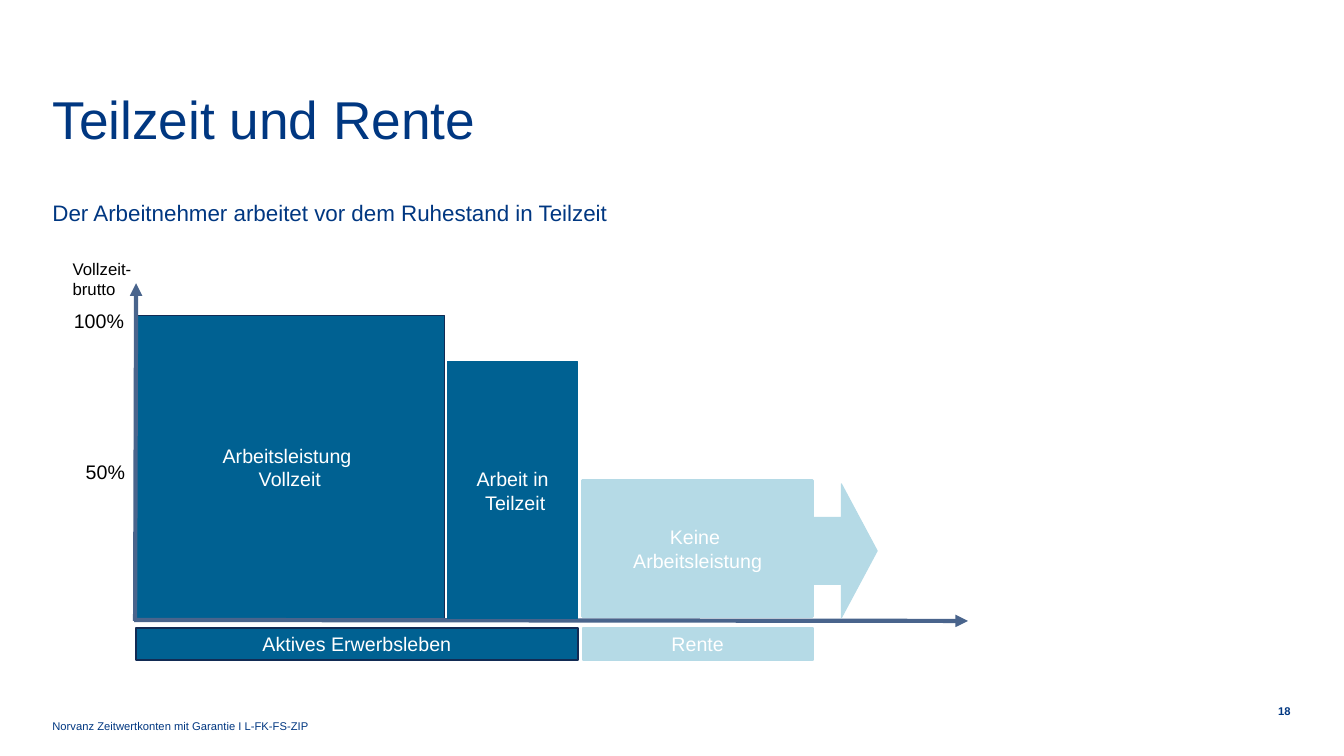
import dataclasses
import typing

import lxml.etree
import pptx
import pptx.dml.color
import pptx.enum.shapes
import pptx.enum.text
import pptx.oxml.ns
import pptx.util

SLIDE_WIDTH, SLIDE_HEIGHT = 13.33, 7.5
COLUMNS, ROWS = 133.3, 75
NAVY, TEAL, PALE, AXIS = "003781", "006192", "B5DAE6", "49648C"
EDGE, WHITE, BLACK = "122B54", "FFFFFF", "000000"
SHAPES = pptx.enum.shapes.MSO_SHAPE
ALIGN = pptx.enum.text.PP_ALIGN
ANCHOR = pptx.enum.text.MSO_ANCHOR
LABEL_MARGINS = (1, 0.5)
MARGIN = 5.2
ACTIVE_LEFT, PENSION_LEFT, PENSION_WIDTH = 13.5, 57.8, 22.8
PHASE_TOP, PHASE_HEIGHT = 62.3, 3.2


class Area(typing.NamedTuple):
    column: float
    row: float
    columns: float
    rows: float


@dataclasses.dataclass
class Block:
    area: Area
    fill: str
    edge: str
    edge_width: float
    text: str = ""
    kind: typing.Any = SHAPES.RECTANGLE


@dataclasses.dataclass
class Label:
    area: Area
    text: str
    size: float
    color: str = NAVY
    align: typing.Any = ALIGN.LEFT
    anchor: typing.Any = ANCHOR.TOP
    bold: bool = False
    spacing: typing.Any = None
    margins: tuple[float, float] = (0, 0)


class Axis(typing.NamedTuple):
    start: tuple[float, float]
    end: tuple[float, float]


def across(columns: float) -> int:
    return pptx.util.Inches(columns * SLIDE_WIDTH / COLUMNS)


def down(rows: float) -> int:
    return pptx.util.Inches(rows * SLIDE_HEIGHT / ROWS)


def place(area: Area) -> tuple[int, int, int, int]:
    return across(area.column), down(area.row), across(area.columns), down(area.rows)


def color_of(value: str) -> pptx.dml.color.RGBColor:
    return pptx.dml.color.RGBColor.from_string(value)


def write(frame, text: str, *, size: float, color: str, align=ALIGN.LEFT,
          anchor=ANCHOR.TOP, bold: bool = False, wrap: bool = True, spacing=None) -> None:
    frame.word_wrap = wrap
    frame.vertical_anchor = anchor
    for index, line in enumerate(text.split("\n")):
        para = frame.add_paragraph() if index else frame.paragraphs[0]
        para.alignment = align
        para.line_spacing = spacing
        span = para.add_run()
        span.text = line
        span.font.name = "Arial"
        span.font.size = pptx.util.Pt(size)
        span.font.bold = bold
        span.font.color.rgb = color_of(color)


def draw_label(page, label: Label) -> None:
    frame = page.shapes.add_textbox(*place(label.area)).text_frame
    side, edge = label.margins
    frame.margin_left = frame.margin_right = across(side)
    frame.margin_top = frame.margin_bottom = down(edge)
    write(frame, label.text, size=label.size, color=label.color, align=label.align,
          anchor=label.anchor, bold=label.bold, spacing=label.spacing)


def draw_block(page, block: Block) -> None:
    box = page.shapes.add_shape(block.kind, *place(block.area))
    box.shadow.inherit = False
    box.fill.solid()
    box.fill.fore_color.rgb = color_of(block.fill)
    box.line.color.rgb = color_of(block.edge)
    box.line.width = pptx.util.Pt(block.edge_width)
    if block.text:
        write(box.text_frame, block.text, size=14, color=WHITE, align=ALIGN.CENTER,
              anchor=ANCHOR.MIDDLE, wrap=False)


def draw_axis(page, axis: Axis) -> None:
    arrow = page.shapes.add_connector(
        pptx.enum.shapes.MSO_CONNECTOR.STRAIGHT,
        across(axis.start[0]), down(axis.start[1]),
        across(axis.end[0]), down(axis.end[1]))
    arrow.line.color.rgb = color_of(AXIS)
    arrow.line.width = pptx.util.Pt(3)
    properties = arrow.line._get_or_add_ln()
    lxml.etree.SubElement(properties, pptx.oxml.ns.qn("a:tailEnd"), type="triangle")
    lxml.etree.SubElement(arrow._element.spPr, pptx.oxml.ns.qn("a:effectLst"))


ELEMENTS = [
    Label(Area(125.1, 69.7, 2.9, 1.6), "18", 8, align=ALIGN.RIGHT,
          anchor=ANCHOR.MIDDLE, bold=True, spacing=pptx.util.Pt(10)),
    Label(Area(MARGIN, 9.6, 102, 10.2), "Teilzeit und Rente", 38,
          spacing=pptx.util.Pt(38)),
    Label(Area(MARGIN, 19.8, 122.8, 4),
          "Der Arbeitnehmer arbeitet vor dem Ruhestand in Teilzeit", 16),
    Block(Area(13.4, 31.3, 30.7, 30.1), TEAL, EDGE, 0.75, "Arbeitsleistung \nVollzeit"),
    Block(Area(PENSION_LEFT, 47.7, PENSION_WIDTH, 13.5), PALE, PALE, 2.25,
          "Keine \nArbeitsleistung"),
    Axis((13.3, 61.5), (96, 61.6)),
    Label(Area(6.2, 25.2, 10.4, 4.9), "Vollzeit- brutto", 12, BLACK,
          margins=LABEL_MARGINS),
    Label(Area(6.2, 30.2, 7.1, 3.3), "100%", 14, BLACK, ALIGN.RIGHT,
          margins=LABEL_MARGINS),
    Label(Area(3.6, 45.1, 9.8, 3.3), "50%", 14, BLACK, ALIGN.RIGHT,
          margins=LABEL_MARGINS),
    Axis((13.4, 61.6), (13.5, 28.1)),
    Block(Area(ACTIVE_LEFT, PHASE_TOP, 43.8, PHASE_HEIGHT), TEAL, EDGE, 1.5,
          "Aktives Erwerbsleben"),
    Block(Area(PENSION_LEFT, PHASE_TOP, PENSION_WIDTH, PHASE_HEIGHT), PALE, PALE, 1.5,
          "Rente"),
    Block(Area(79.9, 48, 7.1, 13.3), PALE, PALE, 0.75, kind=SHAPES.RIGHT_ARROW),
    Block(Area(44.4, 35.9, 12.9, 25.5), TEAL, TEAL, 0.75, "Arbeit in\n Teilzeit"),
    Label(Area(MARGIN, 68.9, 102, 3.8),
          "Norvanz Zeitwertkonten mit Garantie I L-FK-FS-ZIP", 8,
          anchor=ANCHOR.BOTTOM, spacing=0.9),
]
PAINTERS = {Label: draw_label, Block: draw_block, Axis: draw_axis}


def main() -> None:
    deck = pptx.Presentation()
    deck.slide_width = pptx.util.Inches(SLIDE_WIDTH)
    deck.slide_height = pptx.util.Inches(SLIDE_HEIGHT)
    page = deck.slides.add_slide(deck.slide_layouts[6])
    for element in ELEMENTS:
        PAINTERS[type(element)](page, element)
    deck.save("out.pptx")


if __name__ == "__main__":
    main()
